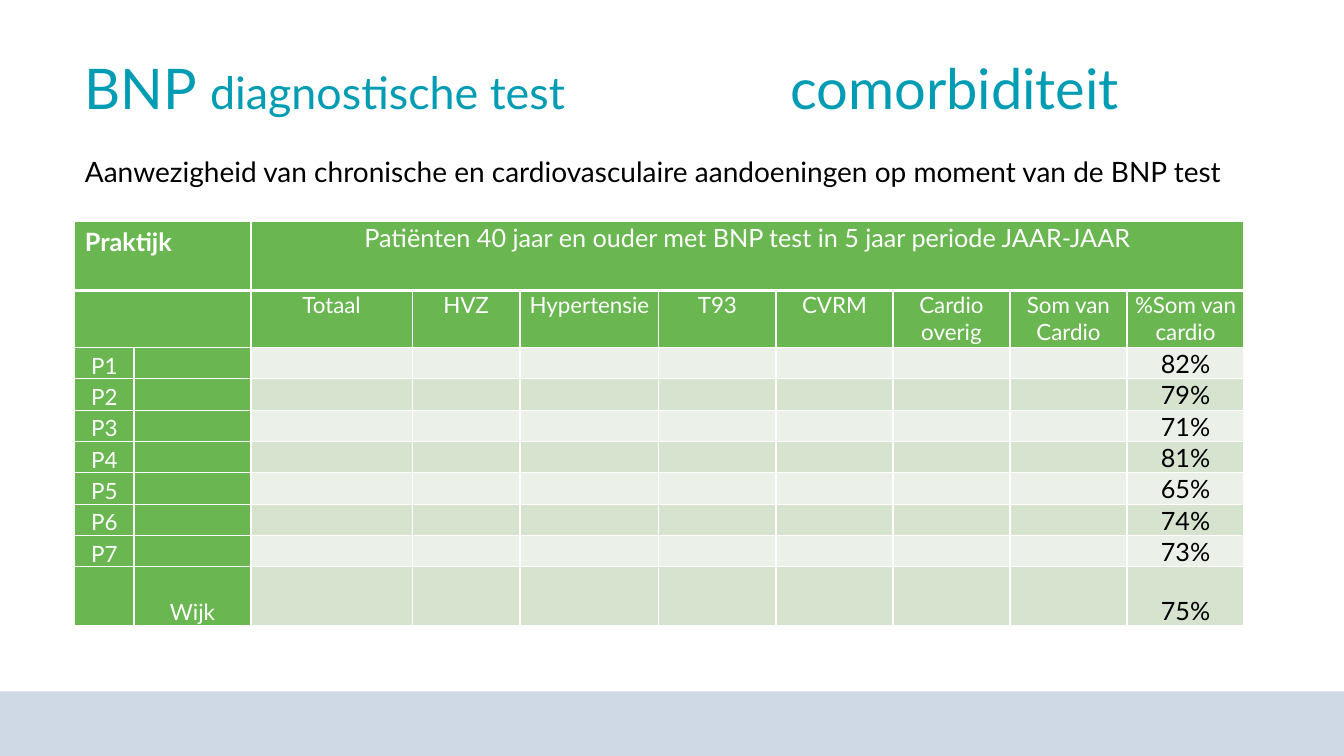
"""Build the slide on comorbidity at the time of the BNP test."""
import dataclasses

import lxml.etree
import pptx
import pptx.dml.color
import pptx.enum.shapes
import pptx.enum.text
import pptx.oxml.ns
import pptx.util

Pt = pptx.util.Pt
RGB = pptx.dml.color.RGBColor.from_string
qn = pptx.oxml.ns.qn
CENTER = pptx.enum.text.PP_ALIGN.CENTER
BOTTOM = pptx.enum.text.MSO_ANCHOR.BOTTOM


@dataclasses.dataclass(frozen=True)
class Theme:
    font: str = "Lato"
    title: str = "009CB4"
    text: str = "000000"
    white: str = "FFFFFF"
    green: str = "6AB650"
    bands: tuple = ("EBF1E9", "D5E3CF")
    footer: str = "CED9E5"
    title_size: int = 40
    subtitle_size: int = 32
    lead_size: int = 20
    body_size: int = 18
    label_size: int = 16


theme = Theme()


def add_text(p, text, size=theme.label_size, color=theme.white, bold=False, align=None):
    if align is not None:
        p.alignment = align
    r = p.add_run()
    r.text = text
    r.font.name = theme.font
    r.font.size = Pt(size)
    r.font.bold = bold
    r.font.color.rgb = RGB(color)


def set_borders(cell, widths):
    tcPr = cell._tc.get_or_add_tcPr()
    for i, (side, width) in enumerate(widths.items()):
        ln = lxml.etree.Element(qn(f"a:ln{side}"), w=str(Pt(width)))
        fill = lxml.etree.SubElement(ln, qn("a:solidFill"))
        lxml.etree.SubElement(fill, qn("a:srgbClr"), val=theme.white)
        tcPr.insert(i, ln)


prs = pptx.Presentation()
prs.slide_width, prs.slide_height = Pt(960), Pt(540)
s = prs.slides.add_slide(prs.slide_layouts[6])

footer = s.shapes.add_shape(
    pptx.enum.shapes.MSO_SHAPE.RECTANGLE, Pt(0), Pt(493.8), Pt(960), Pt(46.2))
footer.shadow.inherit = False
footer.fill.solid()
footer.fill.fore_color.rgb = RGB(theme.footer)
footer.line.fill.background()

headings = ["Totaal", "HVZ", "Hypertensie", "T93", "CVRM",
            "Cardio overig", "Som van Cardio", "%Som van cardio"]
shares = ["82%", "79%", "71%", "81%", "65%", "74%", "73%", "75%"]
practices = [f"P{n}" for n in range(1, 8)]
col_widths = [42.2, 83.6, 115.2, 77, 99.2] + [83.6] * 5
row_heights = [49.6, 40.6] + [22.4] * 7 + [41.8]
last_col, last_row = len(col_widths) - 1, len(row_heights) - 1

texts = {(0, 0): "Praktijk",
         (0, 2): "Patiënten 40 jaar en ouder met BNP test in 5 jaar periode JAAR-JAAR",
         (last_row, 1): "Wijk"}
texts.update({(1, c): heading for c, heading in enumerate(headings, 2)})
texts.update({(r, 0): practice for r, practice in enumerate(practices, 2)})
texts.update({(r, last_col): share for r, share in enumerate(shares, 2)})

frame = s.shapes.add_table(len(row_heights), len(col_widths), Pt(53.5), Pt(158),
                           Pt(sum(col_widths)), Pt(sum(row_heights)))
table = frame.table
table.first_row = table.horz_banding = False
for column, width in zip(table.columns, col_widths):
    column.width = Pt(width)
for row, height in zip(table.rows, row_heights):
    row.height = Pt(height)

for r in range(len(row_heights)):
    for c in range(len(col_widths)):
        cell = table.cell(r, c)
        header = r < 2 or c < 2
        cell.fill.solid()
        cell.fill.fore_color.rgb = RGB(theme.green if header else theme.bands[r % 2])
        set_borders(cell, {"L": 1, "R": 1, "T": 3 if r == 1 else 1, "B": 3 if r == 0 else 1})
        corner = (r, c) == (0, 0)
        if not corner:
            cell.margin_left = cell.margin_right = cell.margin_top = Pt(0.7)
            cell.margin_bottom = Pt(0)
        if r > 1:
            cell.vertical_anchor = BOTTOM
        p = cell.text_frame.paragraphs[0]
        if (r, c) in texts:
            large = r == 0 or not header
            add_text(p, texts[r, c], size=theme.body_size if large else theme.label_size,
                     color=theme.white if header else theme.text,
                     bold=corner, align=None if corner else CENTER)
        else:
            p._p.get_or_add_endParaRPr().set("sz", str(theme.label_size * 100))

table.cell(0, 0).merge(table.cell(0, 1))
table.cell(0, 2).merge(table.cell(0, last_col))
table.cell(1, 0).merge(table.cell(1, 1))

tf = s.shapes.add_textbox(Pt(53.5), Pt(34.6), Pt(858.2), Pt(139)).text_frame
tf.word_wrap = True
p = tf.paragraphs[0]
tabs = lxml.etree.SubElement(p._p.get_or_add_pPr(), qn("a:tabLst"))
lxml.etree.SubElement(tabs, qn("a:tab"), pos=str(Pt(504)), algn="l")
add_text(p, "BNP ", size=theme.title_size, color=theme.title)
add_text(p, "diagnostische test", size=theme.subtitle_size, color=theme.title)
add_text(p, "\tcomorbiditeit", size=theme.title_size, color=theme.title)
p = tf.add_paragraph()
p.space_before = Pt(24)
add_text(p, "Aanwezigheid van chronische en cardiovasculaire aandoeningen op moment van de BNP test",
         size=theme.lead_size, color=theme.text)

prs.save("out.pptx")
